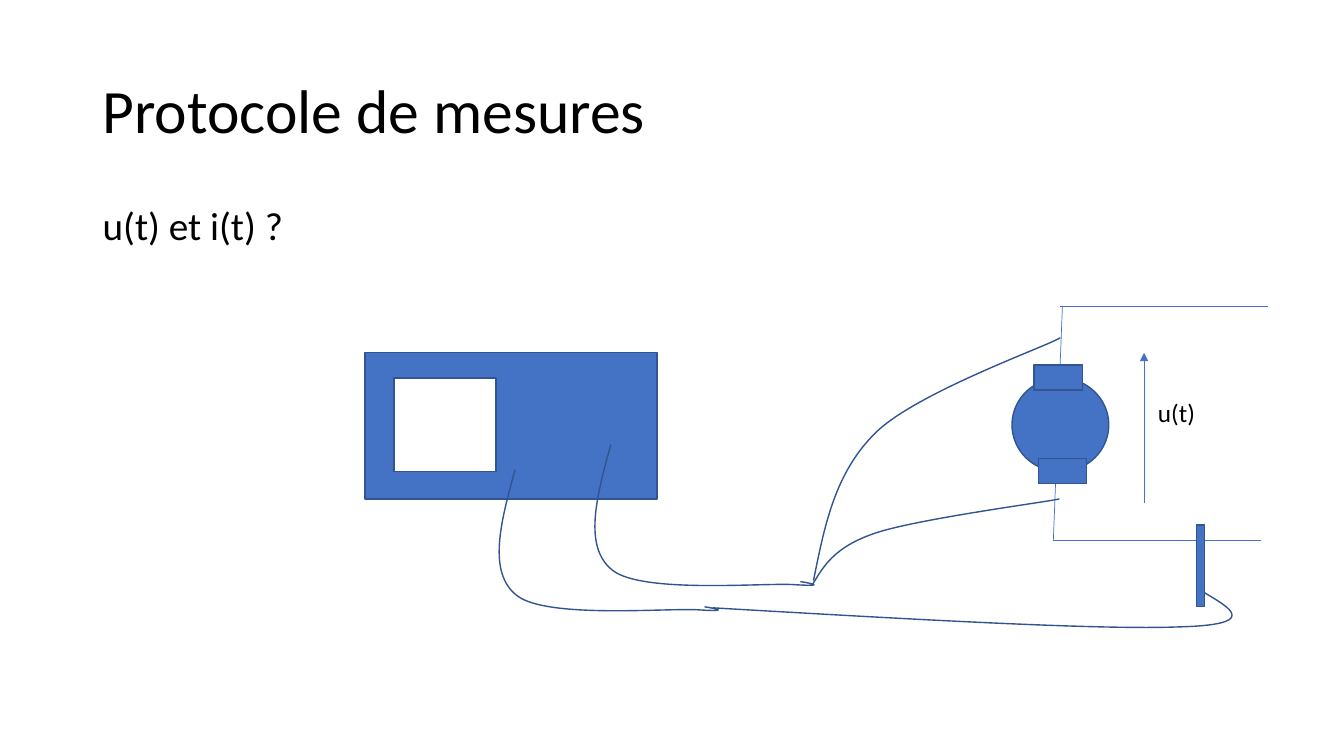
from lxml import etree
from pptx import Presentation
from pptx.dml.color import RGBColor
from pptx.enum.shapes import MSO_CONNECTOR, MSO_SHAPE
from pptx.enum.text import MSO_ANCHOR
from pptx.oxml.ns import qn
from pptx.util import Emu, Pt

RECTANGLE, OVAL = MSO_SHAPE.RECTANGLE, MSO_SHAPE.OVAL
STRAIGHT = MSO_CONNECTOR.STRAIGHT
MIDDLE, TOP = MSO_ANCHOR.MIDDLE, MSO_ANCHOR.TOP

PX = 9144
SLIDE_HEIGHT = 750
FONT = "Calibri"
COLORS = {"blue": "4472C4", "outline": "325491", "white": "FFFFFF", "black": "000000"}

TEXTS = [
    ("Protocole de mesures", (92, 40, 1150, 145), 44, MIDDLE, 0.9),
    ("u(t) et i(t) ?", (92, 200, 1150, 476), 28, TOP, 0.9),
    ("u(t)", (1139, 389, 124, 40), 18, TOP, 1.0),
]

INSTRUMENTS = [
    (RECTANGLE, (362, 350, 290, 145), "blue"),
    (RECTANGLE, (391, 375, 101, 93), "white"),
    (OVAL, (1004, 375, 96, 93), "blue"),
]
CONTACTS = [
    (RECTANGLE, (1026, 362, 48, 25), "blue"),
    (RECTANGLE, (1030, 455, 48, 25), "blue"),
    (RECTANGLE, (1187, 521, 8, 81), "blue"),
]

CIRCUIT_WIRES = [
    ((1054, 304), (1045, 536)),
    ((1045, 536), (1251, 536)),
    ((1052, 304), (1258, 304)),
]
VOLTAGE_ARROW = ((1135, 499), (1135, 350))

PLUG_BOX = (495, 466, 218, 139)
PLUG_CURVE = [(511, 466), (497, 517), (483, 568), (513, 591), (543, 614),
              (662, 603), (693, 605), (724, 607), (712, 604), (699, 602)]
PLUG_SHIFTS = [(0, 0), (95, -25)]
PROBE_CABLES = [
    ((807, 335, 245, 241),
     [(807, 576), (818, 522), (828, 469), (869, 429), (910, 389), (1040, 343), (1052, 335)]),
    ((806, 495, 245, 85),
     [(806, 580), (817, 562), (827, 543), (868, 529), (909, 515), (1038, 498), (1051, 495)]),
    ((707, 588, 516, 35),
     [(707, 603), (897, 614), (1087, 625), (1168, 622), (1250, 620), (1222, 604), (1195, 588)]),
]


def color(name):
    return RGBColor.from_string(COLORS[name])


def emu(values):
    return [Emu(round(value * PX)) for value in values]


def style_line(line, name, width):
    line.color.rgb = color(name)
    line.width = Pt(width)


def add_text(slide, text, box, size, anchor, spacing):
    frame = slide.shapes.add_textbox(*emu(box)).text_frame
    frame.word_wrap = True
    frame.vertical_anchor = anchor
    paragraph = frame.paragraphs[0]
    paragraph.line_spacing = spacing
    run = paragraph.add_run()
    run.text = text
    run.font.name = FONT
    run.font.size = Pt(size)
    run.font.color.rgb = color("black")


def add_block(slide, kind, box, fill):
    shape = slide.shapes.add_shape(kind, *emu(box))
    shape.shadow.inherit = False
    shape.fill.solid()
    shape.fill.fore_color.rgb = color(fill)
    style_line(shape.line, "outline", 1)


def add_wire(slide, start, end, arrow=False):
    connector = slide.shapes.add_connector(STRAIGHT, *emu(start + end))
    style_line(connector.line, "blue", 0.5)
    if arrow:
        etree.SubElement(connector.line._get_or_add_ln(), qn("a:tailEnd"), type="triangle")
    etree.SubElement(connector._element.spPr, qn("a:effectLst"))


def bend(shape, box):
    left, top, width, height = emu(box)
    outline = next(shape._element.iter(qn("a:path")))
    for point in outline.iter(qn("a:pt")):
        point.set("x", str(int(point.get("x")) + shape.left - left))
        point.set("y", str(int(point.get("y")) + shape.top - top))
    segments = outline.findall(qn("a:lnTo"))
    for first in range(0, len(segments), 3):
        curve = etree.SubElement(outline, qn("a:cubicBezTo"))
        for segment in segments[first:first + 3]:
            curve.append(segment[0])
            outline.remove(segment)
    outline.set("w", str(width))
    outline.set("h", str(height))
    shape.left, shape.top, shape.width, shape.height = left, top, width, height


def add_cable(slide, box, controls):
    start, *others = [emu(point) for point in controls]
    builder = slide.shapes.build_freeform(*start)
    builder.add_line_segments(others, close=False)
    shape = builder.convert_to_shape()
    bend(shape, box)
    shape.shadow.inherit = False
    shape.fill.background()
    style_line(shape.line, "outline", 1)


def main():
    presentation = Presentation()
    presentation.slide_width, presentation.slide_height = emu(
        (SLIDE_HEIGHT * 16 / 9, SLIDE_HEIGHT))
    slide = presentation.slides.add_slide(presentation.slide_layouts[6])
    for text in TEXTS:
        add_text(slide, *text)
    for block in INSTRUMENTS:
        add_block(slide, *block)
    for wire in CIRCUIT_WIRES:
        add_wire(slide, *wire)
    add_wire(slide, *VOLTAGE_ARROW, arrow=True)
    left, top, width, height = PLUG_BOX
    for dx, dy in PLUG_SHIFTS:
        add_cable(slide, (left + dx, top + dy, width, height),
                  [(x + dx, y + dy) for x, y in PLUG_CURVE])
    for cable in PROBE_CABLES:
        add_cable(slide, *cable)
    for block in CONTACTS:
        add_block(slide, *block)
    presentation.save("out.pptx")


if __name__ == "__main__":
    main()
